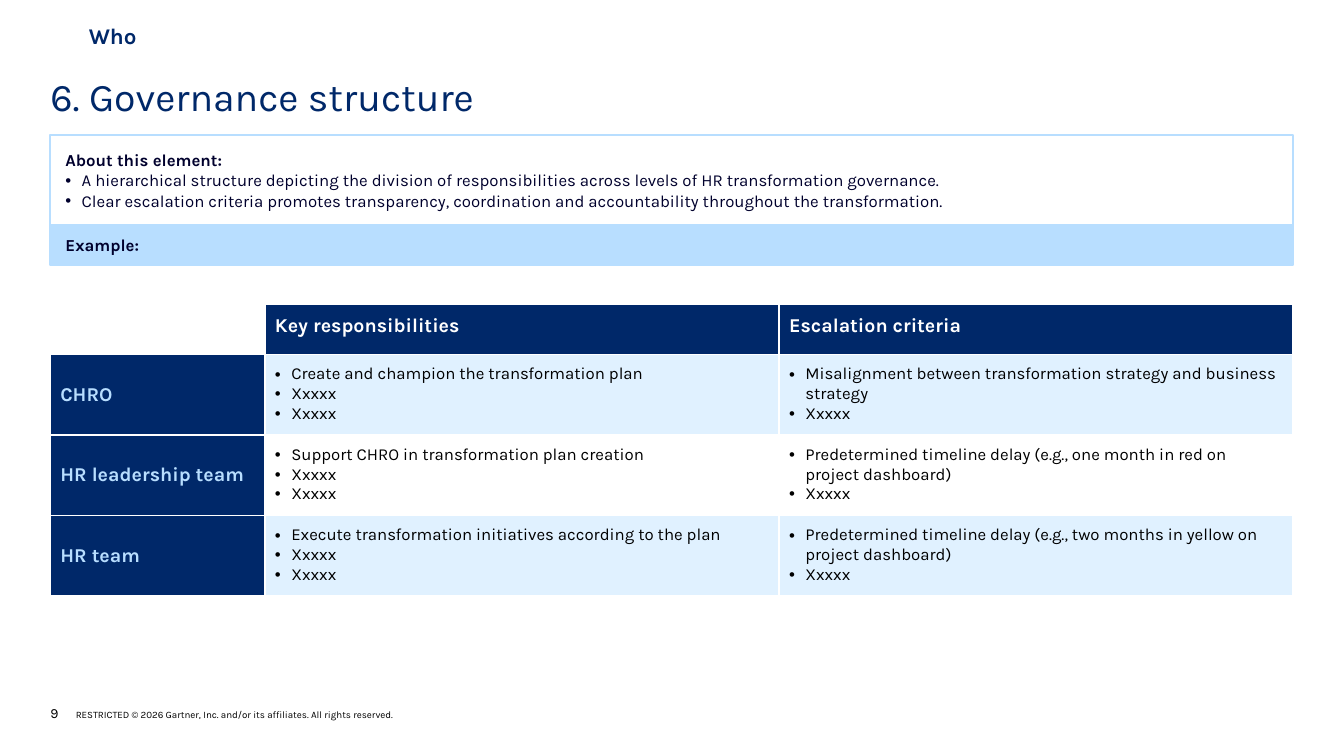
import dataclasses

import pptx
import pptx.dml.color
import pptx.enum.shapes
import pptx.enum.text
import pptx.oxml.ns
import pptx.util
from lxml import etree

Cm = pptx.util.Cm
ANCHOR = pptx.enum.text.MSO_ANCHOR


@dataclasses.dataclass(frozen=True)
class Theme:
    """Colours, type sizes and shared measures of the slide."""
    font: str = "Karla"
    navy: str = "002869"
    ink: str = "00002D"
    black: str = "000000"
    white: str = "FFFFFF"
    sky: str = "B8DEFF"
    pale: str = "E0F1FF"
    title: int = 28
    tag: int = 16
    heading: int = 14
    body: int = 12
    page: int = 10
    legal: int = 7
    rule: float = 1.5
    bullet_indent: float = 0.41


THEME = Theme()

RESPONSIBILITIES = [
    ("CHRO",
     ["Create and champion the transformation plan", "Xxxxx", "Xxxxx"],
     ["Misalignment between transformation strategy and business strategy", "Xxxxx"]),
    ("HR leadership team",
     ["Support CHRO in transformation plan creation", "Xxxxx", "Xxxxx"],
     ["Predetermined timeline delay (e.g., one month in red on project dashboard)", "Xxxxx"]),
    ("HR team",
     ["Execute transformation initiatives according to the plan", "Xxxxx", "Xxxxx"],
     ["Predetermined timeline delay (e.g., two months in yellow on project dashboard)", "Xxxxx"]),
]


def rgb(colour):
    """Return the colour object for a hex string."""
    return pptx.dml.color.RGBColor.from_string(colour)


def add_child(parent, tag, **attributes):
    """Append a DrawingML element to its parent."""
    return etree.SubElement(parent, pptx.oxml.ns.qn(tag), attributes)


def hang(paragraph, indent):
    """Give a paragraph a hanging indent in centimetres."""
    properties = paragraph._p.get_or_add_pPr()
    properties.set("marL", str(Cm(indent)))
    properties.set("indent", str(-Cm(indent)))
    return properties


def add_run(paragraph, text, size, colour, bold=False):
    """Add one styled run to a paragraph."""
    run = paragraph.add_run()
    run.text = text
    run.font.name = THEME.font
    run.font.size = pptx.util.Pt(size)
    run.font.bold = bold
    run.font.color.rgb = rgb(colour)


def write(frame, lines, size, colour, bold=False, bulleted=False):
    """Write lines as paragraphs, after any text already in the frame."""
    for line in lines:
        first = frame.paragraphs[0]
        paragraph = frame.add_paragraph() if first.runs else first
        paragraph.alignment = pptx.enum.text.PP_ALIGN.LEFT
        if bulleted:
            properties = hang(paragraph, THEME.bullet_indent)
            add_child(properties, "a:buFont", typeface="Arial")
            add_child(properties, "a:buChar", char="•")
        add_run(paragraph, line, size, colour, bold)


def set_margins(holder, across, down):
    """Set equal side margins and equal top and bottom margins."""
    holder.margin_left = holder.margin_right = Cm(across)
    holder.margin_top = holder.margin_bottom = Cm(down)


def add_label(slide, box, anchor):
    """Add a wrapping text box without margins and return its frame."""
    frame = slide.shapes.add_textbox(*map(Cm, box)).text_frame
    frame.word_wrap = True
    frame.vertical_anchor = anchor
    set_margins(frame, 0, 0)
    return frame


def add_panel(slide, box, padding, fill=None):
    """Add an outlined rectangle and return its text frame."""
    panel = slide.shapes.add_shape(
        pptx.enum.shapes.MSO_SHAPE.RECTANGLE, *map(Cm, box))
    panel.shadow.inherit = False
    panel.line.color.rgb = rgb(THEME.sky)
    panel.line.width = pptx.util.Pt(THEME.rule)
    paint(panel, fill)
    frame = panel.text_frame
    frame.word_wrap = True
    frame.vertical_anchor = ANCHOR.TOP
    set_margins(frame, 0.38, padding)
    return frame


def paint(holder, fill):
    """Fill a shape or cell, or leave it clear."""
    if fill:
        holder.fill.solid()
        holder.fill.fore_color.rgb = rgb(fill)
    else:
        holder.fill.background()


def add_heading(slide, box):
    """Add the section tag and the title."""
    left, top, width, height = box
    title = add_label(slide, (left, top + 1.2, width, height - 1.2), ANCHOR.TOP)
    write(title, ["6. Governance structure"], THEME.title, THEME.navy)
    tag = add_label(slide, (left + 0.97, top, 7.26, 0.53), ANCHOR.MIDDLE)
    write(tag, ["Who"], THEME.tag, THEME.navy, bold=True)


def add_about(slide, box):
    """Add the description panel with the example bar under it."""
    left, top, width, height = box
    bar_height = 1.02
    about = add_panel(slide, (left, top, width, 2.31), 0.38)
    write(about, ["About this element:"], THEME.body, THEME.ink, bold=True)
    write(about, [
        "A hierarchical structure depicting the division of responsibilities "
        "across levels of HR transformation governance.",
        "Clear escalation criteria promotes transparency, coordination and "
        "accountability throughout the transformation.",
    ], THEME.body, THEME.ink, bulleted=True)
    example = add_panel(
        slide, (left, top + height - bar_height, width, bar_height), 0.25, THEME.sky)
    write(example, ["Example:"], THEME.body, THEME.ink, bold=True)


def style_cell(cell, fill=None):
    """Give a cell its margins, white borders and fill."""
    set_margins(cell, 0.25, 0.25)
    properties = cell._tc.get_or_add_tcPr()
    for side in ("a:lnL", "a:lnR", "a:lnT", "a:lnB"):
        border = add_child(properties, side, w=str(pptx.util.Pt(THEME.rule)))
        add_child(add_child(border, "a:solidFill"), "a:srgbClr", val=THEME.white)
    paint(cell, fill)


def add_governance_table(slide, box):
    """Add the table of responsibilities and escalation criteria by role."""
    left, top, width, height = box
    role_width, header_height = 5.41, 1.11
    row_height = (height - header_height) / len(RESPONSIBILITIES)
    table = slide.shapes.add_table(
        len(RESPONSIBILITIES) + 1, 3, *map(Cm, box)).table
    table.horz_banding = False
    for index, column in enumerate(table.columns):
        column.width = Cm((width - role_width) / 2 if index else role_width)
    for index, row in enumerate(table.rows):
        row.height = Cm(row_height if index else header_height)

    style_cell(table.cell(0, 0))
    for column, heading in enumerate(["Key responsibilities", "Escalation criteria"], 1):
        cell = table.cell(0, column)
        style_cell(cell, THEME.navy)
        write(cell.text_frame, [heading], THEME.heading, THEME.white, bold=True)
    for row, (role, *duties) in enumerate(RESPONSIBILITIES, 1):
        role_cell = table.cell(row, 0)
        style_cell(role_cell, THEME.navy)
        role_cell.vertical_anchor = ANCHOR.MIDDLE
        write(role_cell.text_frame, [role], THEME.heading, THEME.sky, bold=True)
        for column, points in enumerate(duties, 1):
            cell = table.cell(row, column)
            style_cell(cell, THEME.pale if row % 2 else None)
            write(cell.text_frame, points, THEME.body, THEME.black, bulleted=True)


def add_footer(slide, box):
    """Add the page number and the copyright line."""
    footer = add_label(slide, box, ANCHOR.BOTTOM).paragraphs[0]
    hang(footer, 0.64)
    add_run(footer, "9", THEME.page, THEME.black)
    add_run(footer, "\tRESTRICTED © 2026 Gartner, Inc. and/or its affiliates. "
            "All rights reserved.", THEME.legal, THEME.black)


def main():
    """Build the governance slide and save it."""
    deck = pptx.Presentation()
    deck.slide_width, deck.slide_height = Cm(33.87), Cm(19.05)
    slide = deck.slides.add_slide(deck.slide_layouts[6])
    left, width = 1.27, 31.32
    add_footer(slide, (left, 17.75, 20.29, 0.43))
    add_heading(slide, (left, 0.63, width, 2.44))
    add_about(slide, (left, 3.4, width, 3.28))
    add_governance_table(slide, (left, 7.67, width, 7.2))
    deck.save("out.pptx")


if __name__ == "__main__":
    main()
